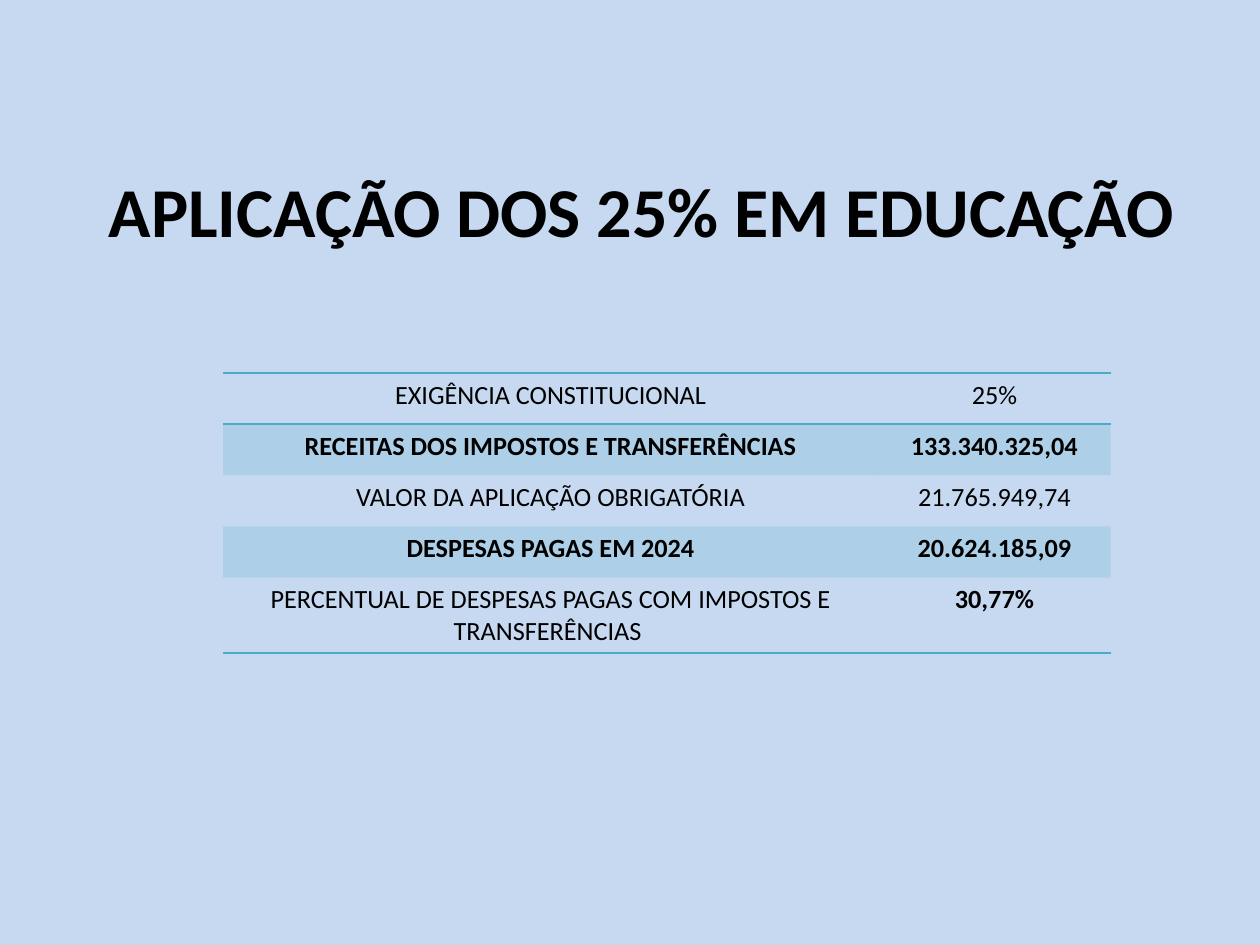
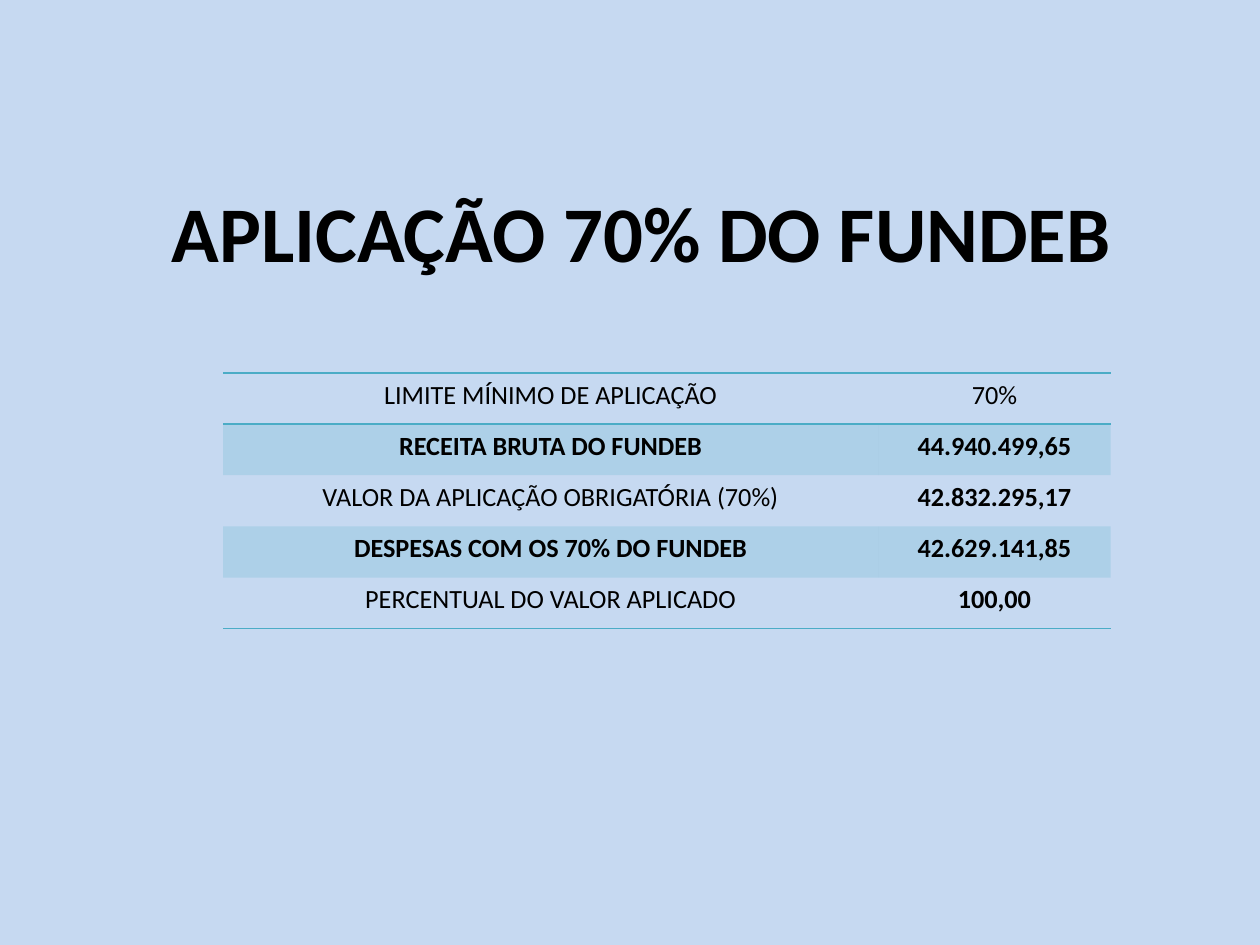
from dataclasses import dataclass

from lxml.etree import SubElement
from pptx import Presentation
from pptx.dml.color import RGBColor
from pptx.enum.text import MSO_ANCHOR, PP_ALIGN
from pptx.oxml.ns import qn
from pptx.slide import Slide
from pptx.table import _Cell
from pptx.text.text import TextFrame
from pptx.util import Inches, Pt


@dataclass(frozen=True)
class Theme:
    background: str = "C6D9F1"
    accent: str = "4BACC6"
    ink: str = "000000"
    font: str = "Calibri"
    table_size: float = 15
    rule_width: float = 1
    band_opacity: int = 20
    plain_table_style: str = "{2D5ABB26-0587-4C30-8999-92F81FD0307C}"


@dataclass(frozen=True)
class Title:
    text: str
    size: float
    rows: float
    anchor: MSO_ANCHOR


@dataclass(frozen=True)
class Entry:
    label: str
    value: str
    bold_label: bool = False
    bold_value: bool = False


@dataclass(frozen=True)
class Report:
    title: Title
    entries: tuple[Entry, ...]


THEME = Theme()

# The slide is a grid of 100 columns by 75 rows.
GRID_COLUMNS, GRID_ROWS = 100, 75
SLIDE_WIDTH, SLIDE_HEIGHT = Inches(10), Inches(7.5)
TITLE_LEFT, TITLE_TOP, TITLE_COLUMNS = 5.9, 7.6, 90
TABLE_LEFT, TABLE_TOP, ENTRY_ROWS = 17.7, 29.6, 4.06
LABEL_COLUMNS, VALUE_COLUMNS = 52, 18.45

REPORTS = (
    Report(
        Title("APLICAÇÃO DOS 25% EM EDUCAÇÃO", 40, 18.1, MSO_ANCHOR.MIDDLE),
        (
            Entry("EXIGÊNCIA CONSTITUCIONAL", "25%"),
            Entry("RECEITAS DOS IMPOSTOS E TRANSFERÊNCIAS", "133.340.325,04", True, True),
            Entry("VALOR DA APLICAÇÃO OBRIGATÓRIA", "21.765.949,74"),
            Entry("DESPESAS PAGAS EM 2024", "20.624.185,09", True, True),
            Entry("PERCENTUAL DE DESPESAS PAGAS COM IMPOSTOS E TRANSFERÊNCIAS ", "30,77%",
                  bold_value=True),
        ),
    ),
    Report(
        Title("APLICAÇÃO 70% DO FUNDEB", 45, 15, MSO_ANCHOR.BOTTOM),
        (
            Entry("LIMITE MÍNIMO DE APLICAÇÃO", "70%"),
            Entry("RECEITA BRUTA DO FUNDEB", "44.940.499,65", True, True),
            Entry("VALOR DA APLICAÇÃO OBRIGATÓRIA (70%)", "42.832.295,17", bold_value=True),
            Entry("DESPESAS COM OS 70% DO FUNDEB", "42.629.141,85", True, True),
            Entry("PERCENTUAL DO VALOR APLICADO", "100,00", bold_value=True),
        ),
    ),
)


def columns(count: float) -> int:
    return round(SLIDE_WIDTH * count / GRID_COLUMNS)


def rows(count: float) -> int:
    return round(SLIDE_HEIGHT * count / GRID_ROWS)


def write(frame: TextFrame, text: str, *, size: float, bold: bool = False,
          color: str = THEME.ink, align: PP_ALIGN = PP_ALIGN.CENTER) -> None:
    frame.word_wrap = True
    paragraph = frame.paragraphs[0]
    paragraph.alignment = align
    run = paragraph.add_run()
    run.text = text
    run.font.name = THEME.font
    run.font.size = Pt(size)
    run.font.bold = bold
    run.font.color.rgb = RGBColor.from_string(color)


def rule_cell(cell: _Cell, ruled_sides: str) -> None:
    """Draw the sides named by L, R, T and B, and clear the others."""
    properties = cell._tc.get_or_add_tcPr()
    for side in "LRTB":
        line = SubElement(properties, qn(f"a:ln{side}"), w=str(Pt(THEME.rule_width)))
        if side in ruled_sides:
            solid = SubElement(line, qn("a:solidFill"))
            SubElement(solid, qn("a:srgbClr"), val=THEME.accent)
        else:
            SubElement(line, qn("a:noFill"))


def fill_cell(cell: _Cell, banded: bool) -> None:
    if not banded:
        cell.fill.background()
        return
    cell.fill.solid()
    cell.fill.fore_color.rgb = RGBColor.from_string(THEME.accent)
    color = cell._tc.tcPr.find(f"{qn('a:solidFill')}/{qn('a:srgbClr')}")
    SubElement(color, qn("a:alpha"), val=str(THEME.band_opacity * 1000))


def add_title(slide: Slide, title: Title) -> None:
    box = slide.shapes.add_textbox(columns(TITLE_LEFT), rows(TITLE_TOP),
                                   columns(TITLE_COLUMNS), rows(title.rows))
    box.text_frame.vertical_anchor = title.anchor
    write(box.text_frame, title.text, size=title.size, bold=True)


def add_entries(slide: Slide, entries: tuple[Entry, ...]) -> None:
    table = slide.shapes.add_table(
        len(entries), 2, columns(TABLE_LEFT), rows(TABLE_TOP),
        columns(LABEL_COLUMNS + VALUE_COLUMNS), rows(ENTRY_ROWS * len(entries))).table
    table.first_row = table.horz_banding = False
    table._tbl.tblPr.find(qn("a:tableStyleId")).text = THEME.plain_table_style
    for column, width in zip(table.columns, (LABEL_COLUMNS, VALUE_COLUMNS)):
        column.width = columns(width)

    ruled_sides = {0: "TB", 1: "T", len(entries) - 1: "B"}
    for index, entry in enumerate(entries):
        contents = ((entry.label, entry.bold_label), (entry.value, entry.bold_value))
        for cell, (text, bold) in zip(table.rows[index].cells, contents):
            rule_cell(cell, ruled_sides.get(index, ""))
            fill_cell(cell, banded=index % 2 == 1)
            write(cell.text_frame, text, size=THEME.table_size, bold=bold)


def main() -> None:
    deck = Presentation()
    deck.slide_width, deck.slide_height = SLIDE_WIDTH, SLIDE_HEIGHT
    for report in REPORTS:
        slide = deck.slides.add_slide(deck.slide_layouts[6])
        slide.background.fill.solid()
        slide.background.fill.fore_color.rgb = RGBColor.from_string(THEME.background)
        add_title(slide, report.title)
        add_entries(slide, report.entries)
    deck.save("out.pptx")


if __name__ == "__main__":
    main()
